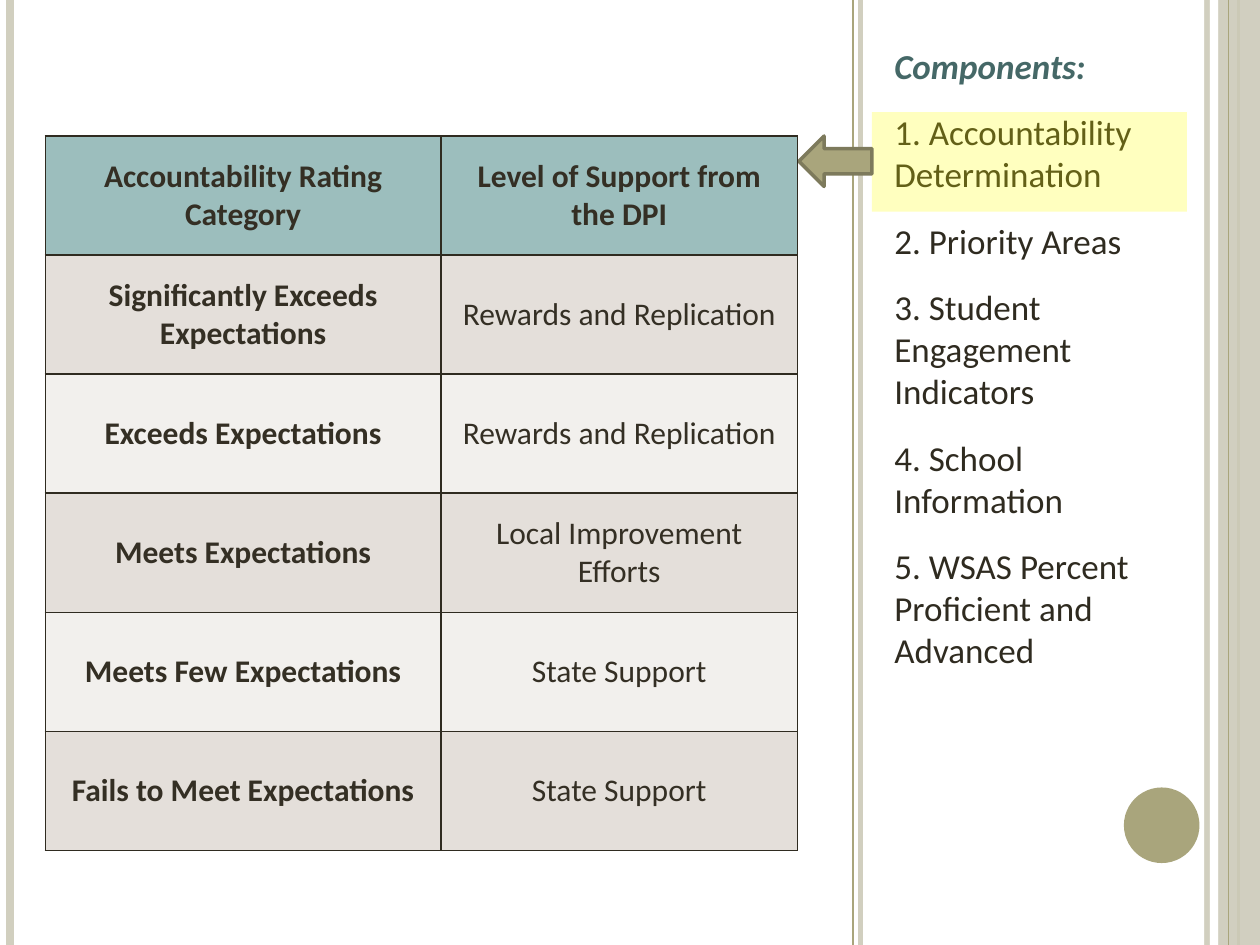
import pptx
import pptx.dml.color
import pptx.enum.shapes
import pptx.enum.text
import pptx.oxml
import pptx.oxml.ns
import pptx.util
from pptx.util import Inches

COLORS = {
    "sand": "D1CFBF",
    "olive": "A9A57C",
    "olive_dark": "7D7A5C",
    "teal": "456867",
    "header": "9CBEBD",
    "band_dark": "E4DFDA",
    "band_light": "F2F0ED",
    "ink": "2F2B20",
    "cell_ink": "342F24",
    "highlight": "FFFF00",
}
SLIDE_HEIGHT = 7.5
SHAPES = pptx.enum.shapes.MSO_SHAPE

RATINGS = [
    ("Accountability Rating Category", "Level of Support from the DPI"),
    ("Significantly Exceeds Expectations", "Rewards and Replication"),
    ("Exceeds Expectations", "Rewards and Replication"),
    ("Meets Expectations", "Local Improvement Efforts"),
    ("Meets Few Expectations", "State Support"),
    ("Fails to Meet Expectations", "State Support"),
]
COMPONENTS = [
    "1. Accountability Determination",
    "2. Priority Areas",
    "3. Student Engagement Indicators",
    "4. School Information",
    "5. WSAS Percent Proficient and Advanced",
]


def rgb(name):
    return pptx.dml.color.RGBColor.from_string(COLORS[name])


def set_opacity(fill, element, percent):
    """Make the solid fill within element partly transparent."""
    color = element.find(".//" + pptx.oxml.ns.qn("a:srgbClr"))
    alpha = pptx.oxml.ns.qn("a:alpha")
    color.append(color.makeelement(alpha, {"val": str(percent * 1000)}))


def write(paragraph, text, size=20, color="ink", bold=False, italic=False,
          align=pptx.enum.text.PP_ALIGN.LEFT, before=0, after=0):
    paragraph.alignment = align
    paragraph.space_before = pptx.util.Pt(before)
    paragraph.space_after = pptx.util.Pt(after)
    run = paragraph.add_run()
    run.text = text
    font = run.font
    font.name = "Calibri"
    font.size = pptx.util.Pt(size)
    font.bold = bold
    font.italic = italic
    font.color.rgb = rgb(color)


def add_rail(slide, x, color, width, opacity=100):
    """Draw a vertical line over the full height of the slide."""
    rail = slide.shapes.add_connector(
        pptx.enum.shapes.MSO_CONNECTOR.STRAIGHT,
        Inches(x), 0, Inches(x), Inches(SLIDE_HEIGHT))
    rail.line.color.rgb = rgb(color)
    rail.line.width = pptx.util.Pt(width)
    properties = rail._element.spPr
    if opacity < 100:
        set_opacity(rail.line.fill, properties, opacity)
    properties.append(properties.makeelement(pptx.oxml.ns.qn("a:effectLst"), {}))


def add_block(slide, kind, left, top, width, height, fill,
              opacity=100, outline=None):
    block = slide.shapes.add_shape(
        kind, Inches(left), Inches(top), Inches(width), Inches(height))
    block.shadow.inherit = False
    block.fill.solid()
    block.fill.fore_color.rgb = rgb(fill)
    if opacity < 100:
        set_opacity(block.fill, block._element.spPr, opacity)
    if outline:
        block.line.color.rgb = rgb(outline)
        block.line.width = pptx.util.Pt(2)
    else:
        block.line.fill.background()


def add_side_panel(slide):
    add_block(slide, SHAPES.RECTANGLE, 9.67, 0, 0.33, SLIDE_HEIGHT,
              "sand", opacity=87)


def add_frame(slide):
    # The side panel and its rail are layered twice for a denser tint
    add_rail(slide, 9.58, "sand", 3, opacity=93)
    add_rail(slide, 0.08, "sand", 4.5)
    add_side_panel(slide)
    add_rail(slide, 9.58, "sand", 3, opacity=93)
    add_rail(slide, 6.83, "sand", 3)
    add_rail(slide, 6.77, "olive", 1)
    add_rail(slide, 9.83, "olive", 1.5)
    add_side_panel(slide)
    add_rail(slide, 9.75, "olive", 0.75)
    add_block(slide, SHAPES.OVAL, 8.92, 6.25, 0.6, 0.6, "olive")


def add_components(slide):
    box = slide.shapes.add_textbox(
        Inches(7), Inches(0.3), Inches(2.5), Inches(5.78))
    frame = box.text_frame
    frame.word_wrap = True
    write(frame.paragraphs[0], "Components:", color="teal",
          bold=True, italic=True, after=10)
    for component in COMPONENTS:
        write(frame.add_paragraph(), component, before=4, after=10)


def set_borders(cell):
    namespace = pptx.oxml.ns.nsdecls("a")
    properties = cell._tc.get_or_add_tcPr()
    for position, side in enumerate(("lnL", "lnR", "lnT", "lnB")):
        properties.insert(position, pptx.oxml.parse_xml(
            f'<a:{side} {namespace} w="12700"><a:solidFill>'
            f'<a:srgbClr val="{COLORS["ink"]}"/></a:solidFill></a:{side}>'))


def add_ratings_table(slide):
    table = slide.shapes.add_table(
        len(RATINGS), 2, Inches(0.36), Inches(1.08),
        Inches(5.97), Inches(5.67)).table
    for column, width in zip(table.columns, (3.14, 2.83)):
        column.width = Inches(width)
    for row, texts in enumerate(RATINGS):
        if row == 0:
            fill = "header"
        else:
            fill = "band_dark" if row % 2 else "band_light"
        for column, text in enumerate(texts):
            cell = table.cell(row, column)
            cell.fill.solid()
            cell.fill.fore_color.rgb = rgb(fill)
            cell.vertical_anchor = pptx.enum.text.MSO_ANCHOR.MIDDLE
            set_borders(cell)
            write(cell.text_frame.paragraphs[0], text, size=18,
                  color="cell_ink", bold=row == 0 or column == 0,
                  align=pptx.enum.text.PP_ALIGN.CENTER)


def main():
    deck = pptx.Presentation()
    deck.slide_width = Inches(10)
    deck.slide_height = Inches(SLIDE_HEIGHT)
    slide = deck.slides.add_slide(deck.slide_layouts[6])

    # Decorative rails and panel
    add_frame(slide)

    # Component list, with the current item marked
    add_components(slide)
    add_block(slide, SHAPES.RECTANGLE, 6.92, 0.89, 2.5, 0.79,
              "highlight", opacity=25)
    add_block(slide, SHAPES.LEFT_ARROW, 6.34, 1.08, 0.58, 0.4,
              "olive", outline="olive_dark")

    # Ratings and the support they lead to
    add_ratings_table(slide)

    deck.save("out.pptx")


if __name__ == "__main__":
    main()
